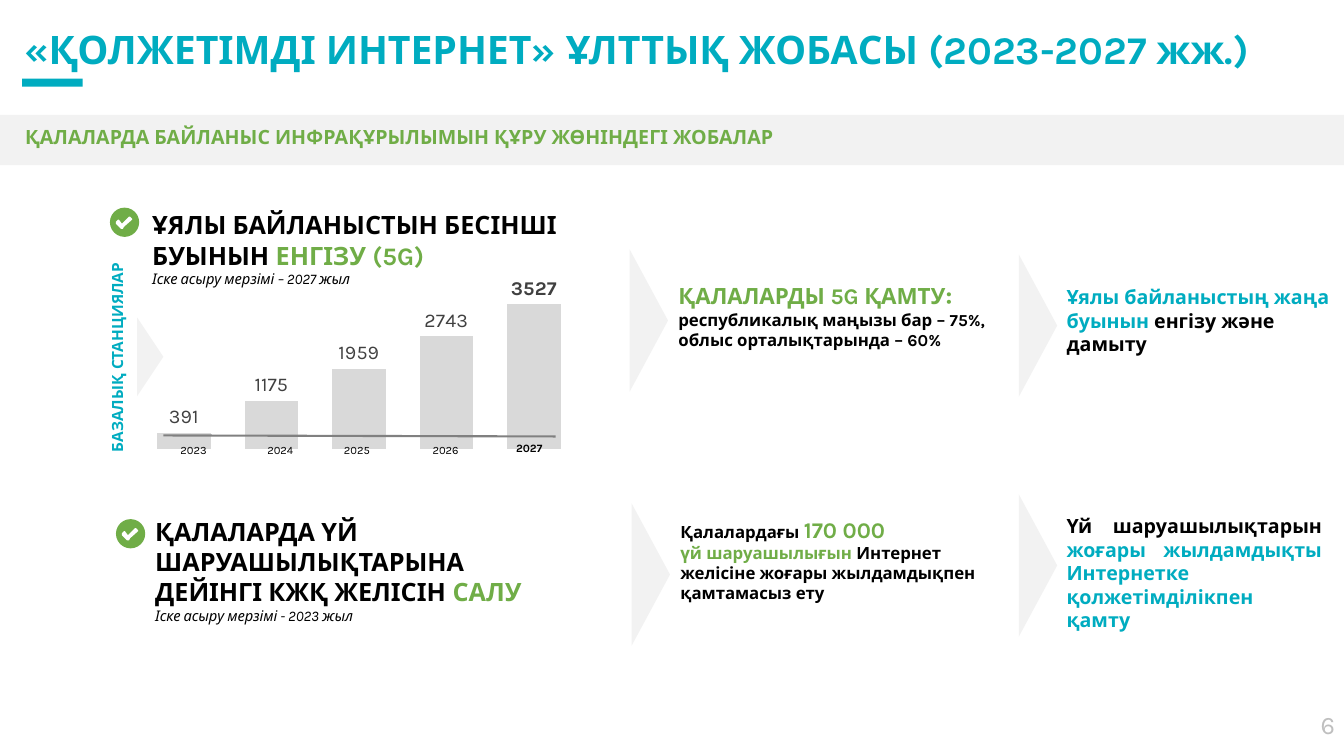
from dataclasses import dataclass

from lxml import etree
from pptx import Presentation
from pptx.chart.data import CategoryChartData
from pptx.dml.color import RGBColor
from pptx.enum.chart import XL_CHART_TYPE as Kind, XL_LABEL_POSITION as Spot
from pptx.enum.shapes import MSO_CONNECTOR as Link, MSO_SHAPE as Form
from pptx.enum.text import MSO_ANCHOR as Anchor, MSO_AUTO_SIZE as Fit, PP_ALIGN as Align
from pptx.oxml import parse_xml
from pptx.oxml.ns import nsdecls, qn
from pptx.util import Inches, Pt


@dataclass(frozen=True)
class Theme:
    font: str = "Karla"
    teal: str = "00ACC0"
    green: str = "70AD47"
    black: str = "000000"
    white: str = "FFFFFF"
    pale: str = "F2F2F2"
    bar: str = "D9D9D9"
    label: str = "404040"
    axis: str = "808080"
    page: str = "BFBFBF"
    title: float = 28
    head: float = 18
    lead: float = 16
    goal: float = 14
    body: float = 12
    side: float = 11
    note: float = 10.5
    year: float = 8


T = Theme()
STATIONS = {"2023": 391, "2024": 1175, "2025": 1959, "2026": 2743, "2027": 3527}
YEAR_MIDS = (1.92, 2.78, 3.54, 4.42, 5.25)
# Check mark outline, in hundredths of an inch from the badge's corner
TICK = ((22, 12), (14, 19), (13, 21), (11, 21), (6, 16), (6, 14),
        (8, 12), (9, 12), (12, 16), (19, 9), (20, 9), (22, 11))


def rgb(code):
    return RGBColor.from_string(code)


def style(font, size, color, bold=False, italic=False):
    font.name, font.size = T.font, Pt(size)
    font.bold, font.italic = bold, italic
    font.color.rgb = rgb(color)


def write(frame, lines, align=Align.LEFT, inset=(0.1, 0.05)):
    """Fill a frame; each line is a list of (text, size, color, bold, italic) runs."""
    frame.word_wrap = True
    frame.auto_size = Fit.NONE
    frame.vertical_anchor = Anchor.TOP
    frame.margin_left = frame.margin_right = Inches(inset[0])
    frame.margin_top = frame.margin_bottom = Inches(inset[1])
    for i, runs in enumerate(lines):
        para = frame.add_paragraph() if i else frame.paragraphs[0]
        para.alignment = align
        for text, *look in runs:
            if text == "\n":
                para.add_line_break()
                continue
            run = para.add_run()
            run.text = text
            style(run.font, *look)


def place(shape, x, y, w, h):
    shape.left, shape.top = Inches(x), Inches(y)
    shape.width, shape.height = Inches(w), Inches(h)


def add_text(slide, box, lines, **opts):
    shape = slide.shapes.add_textbox(*map(Inches, box))
    write(shape.text_frame, lines, **opts)
    return shape


def paint(shape, color):
    shape.shadow.inherit = False
    shape.fill.solid()
    shape.fill.fore_color.rgb = rgb(color)
    shape.line.fill.background()


def add_form(shapes, form, box, color, turn=0):
    shape = shapes.add_shape(form, *map(Inches, box))
    paint(shape, color)
    shape.rotation = turn


def add_wedge(slide, x, y, w=1.41, h=0.38):
    """Add a triangle that points right; the box is the one before turning."""
    add_form(slide.shapes, Form.ISOSCELES_TRIANGLE, (x, y, w, h), T.pale, 90)


def add_badge(slide, x, y):
    group = slide.shapes.add_group_shape()
    add_form(group.shapes, Form.OVAL, (x, y, 0.29, 0.29), T.green)
    dots = [(round(x * 100) + dx, round(y * 100) + dy) for dx, dy in TICK]
    pen = group.shapes.build_freeform(*dots[0], scale=Inches(0.01))
    pen.add_line_segments(dots[1:], close=True)
    paint(pen.convert_to_shape(), T.white)


def set_plot(chart, x, y, w, h):
    """Fix the inner plot area as fractions of the chart."""
    area = chart._chartSpace.chart.plotArea
    for old in area.findall(qn("c:layout")):
        area.remove(old)
    parts = "".join(f'<c:{k} val="{v}"/>' for k, v in (
        ("layoutTarget", "inner"), ("xMode", "edge"), ("yMode", "edge"),
        ("x", x), ("y", y), ("w", w), ("h", h)))
    area.insert(0, parse_xml(f'<c:layout {nsdecls("c")}><c:manualLayout>{parts}'
                             '</c:manualLayout></c:layout>'))


def add_bars(slide, box):
    data = CategoryChartData()
    data.categories = list(STATIONS)
    data.add_series("Базалық станциялар", list(STATIONS.values()))
    chart = slide.shapes.add_chart(Kind.COLUMN_CLUSTERED, *map(Inches, box), data).chart
    style(chart.font, T.goal, T.label)
    chart.has_legend = chart.has_title = False
    axis = chart.value_axis
    axis.minimum_scale, axis.maximum_scale = 0, 4000
    axis.has_major_gridlines = False
    axis.visible = chart.category_axis.visible = False
    set_plot(chart, 0.02, 0.04, 0.96, 0.94)
    plot = chart.plots[0]
    plot.gap_width, plot.overlap = 64, 15
    plot.vary_by_categories = False
    bars = plot.series[0]
    bars.format.fill.solid()
    bars.format.fill.fore_color.rgb = rgb(T.bar)
    tags = bars.data_labels
    tags.show_value, tags.position = True, Spot.OUTSIDE_END
    style(tags.font, T.goal, T.label)
    last = bars.points[len(STATIONS) - 1].data_label
    style(last.font, T.goal, T.label, True)
    last.position = Spot.OUTSIDE_END


def add_axis(slide):
    ends = map(Inches, (1.62, 4.32, 5.51, 4.33))
    line = slide.shapes.add_connector(Link.STRAIGHT, *ends)
    line.line.color.rgb = rgb(T.axis)
    line.line.width = Pt(1.5)
    etree.SubElement(line._element.spPr, qn("a:effectLst"))


def add_years(slide):
    for year, mid in zip(STATIONS, YEAR_MIDS):
        end = year == "2027"
        add_text(slide, (mid - 0.7, 4.33 if end else 4.35, 1.4, 0.24),
                 [[(year, T.year, T.black, end)]], align=Align.CENTER)


def add_task(slide, badge, box, text, accent, term, **opts):
    add_badge(slide, *badge)
    add_text(slide, box, [
        [(text, T.head, T.black, True), (accent, T.head, T.green, True)],
        [(term, T.note, T.black, False, True)]], **opts)


def add_frame(slide):
    add_form(slide.shapes, Form.RECTANGLE, (0, 1.14, 13.33, 0.5), T.pale)
    add_form(slide.shapes, Form.RECTANGLE, (0.22, 0.78, 0.6, 0.08), T.teal)
    title = slide.shapes.title
    place(title, 0.14, 0.2, 13.19, 0.57)
    write(title.text_frame, [[("«ҚОЛЖЕТІМДІ ИНТЕРНЕТ» ҰЛТТЫҚ ЖОБАСЫ (2023-2027 жж.)",
                               T.title, T.teal, True)]])
    add_text(slide, (0.15, 1.19, 12.71, 0.34), [[(
        "ҚАЛАЛАРДА БАЙЛАНЫС ИНФРАҚҰРЫЛЫМЫН ҚҰРУ ЖӨНІНДЕГІ ЖОБАЛАР",
        T.goal, T.green, True)]])
    add_text(slide, (12.87, 6.99, 0.47, 0.4), [[("6", T.head, T.page)]],
             align=Align.RIGHT)


def main():
    deck = Presentation()
    deck.slide_width, deck.slide_height = Inches(13.33), Inches(7.5)
    slide = deck.slides.add_slide(deck.slide_layouts[5])
    add_frame(slide)

    add_task(slide, (1.09, 2.06), (1.47, 2.04, 5, 0.86),
             "ҰЯЛЫ БАЙЛАНЫСТЫН БЕСІНШІ БУЫНЫН ", "ЕНГІЗУ (5G)",
             "Іске асыру мерзімі – 2027 жыл", inset=(0.04, 0.04))
    add_bars(slide, (1.3, 2.75, 4.52, 1.74))
    add_years(slide)
    add_axis(slide)
    side = add_text(slide, (-0.03, 3.4, 2.39, 0.29),
                    [[("БАЗАЛЫҚ СТАНЦИЯЛАР", T.side, T.teal, True)]],
                    align=Align.CENTER)
    side.rotation = 270
    add_wedge(slide, 1.1, 3.41, 0.78, 0.26)
    add_task(slide, (1.15, 5.15), (1.44, 5.07, 4.35, 1.42),
             "ҚАЛАЛАРДА ҮЙ ШАРУАШЫЛЫҚТАРЫНА ДЕЙІНГІ КЖҚ ЖЕЛІСІН ", "САЛУ",
             "Іске асыру мерзімі - 2023 жыл")

    for spot in ((5.73, 2.99), (5.75, 5.51), (9.59, 3.04), (9.59, 5.42)):
        add_wedge(slide, *spot)
    add_text(slide, (6.63, 2.72, 3.35, 1.02), [
        [("ҚАЛАЛАРДЫ 5G ҚАМТУ", T.lead, T.green, True), (":", T.head, T.green, True)],
        [("республикалық маңызы бар – 75%,", T.body, T.black, True)],
        [("облыс орталықтарында – 60%", T.body, T.black, True)]])
    add_text(slide, (6.65, 5.07, 3.48, 1.02), [[
        ("Қалалардағы ", T.body, T.black, True), ("170 000", T.lead, T.green, True),
        ("\n",), ("үй шаруашылығын", T.body, T.green, True),
        (" Интернет желісіне жоғары жылдамдықпен қамтамасыз ету",
         T.body, T.black, True)]])
    add_text(slide, (10.48, 2.78, 2.92, 0.81), [[
        ("Ұялы байланыстың жаңа буынын ", T.goal, T.teal, True),
        ("енгізу және дамыту", T.goal, T.black, True)]])
    add_text(slide, (10.48, 5.05, 2.73, 1.04), [[
        ("Үй шаруашылықтарын ", T.goal, T.black, True),
        ("жоғары жылдамдықты Интернетке қолжетімділікпен қамту",
         T.goal, T.teal, True)]], align=Align.JUSTIFY)
    deck.save("out.pptx")


if __name__ == "__main__":
    main()
